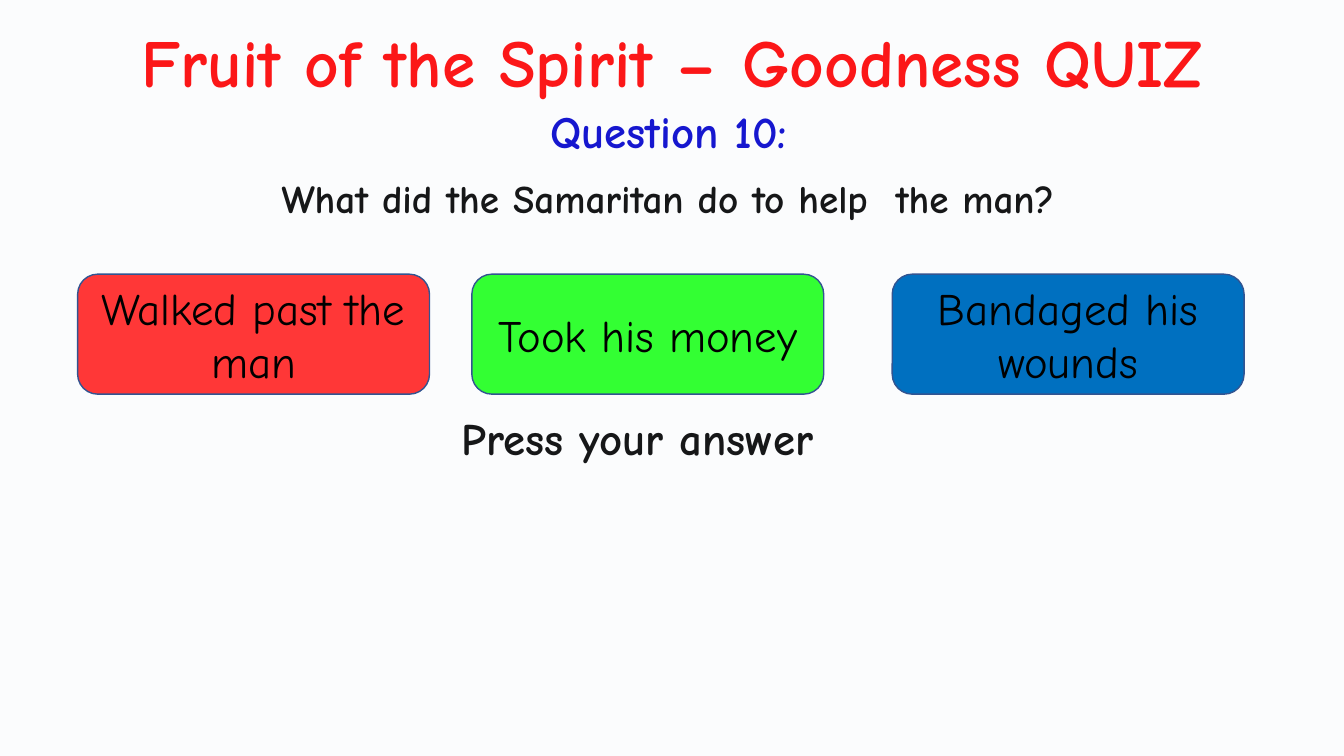
from dataclasses import dataclass

from lxml.etree import SubElement
from pptx import Presentation
from pptx.dml.color import RGBColor
from pptx.enum.shapes import MSO_SHAPE as Preset
from pptx.enum.text import MSO_ANCHOR as Anchor, MSO_AUTO_SIZE as AutoSize, PP_ALIGN as Align
from pptx.oxml.ns import qn
from pptx.shapes.autoshape import Shape
from pptx.slide import Slide
from pptx.util import Inches, Length, Pt

WIDTH, HEIGHT = Inches(13.33), Inches(7.5)
FONT = "Comic Neue"
EDGE = "325491"


@dataclass(frozen=True)
class Area:
    left: float
    top: float
    width: float
    height: float

    def lengths(self) -> tuple[Length, ...]:
        return (
            Length(round(WIDTH * self.left / 100)),
            Length(round(HEIGHT * self.top / 100)),
            Length(round(WIDTH * self.width / 100)),
            Length(round(HEIGHT * self.height / 100)),
        )


@dataclass(frozen=True)
class Caption:
    text: str
    area: Area
    size: int
    color: str = "000000"
    align: Align = Align.CENTER
    space_before: float = 0
    line_spacing: float | Length = 1.0


@dataclass(frozen=True)
class Answer:
    text: str
    left: float
    fill: str


TITLE = Caption("Fruit of the Spirit – Goodness QUIZ", Area(3.3, 2, 93.4, 12.13), 48, "FF0000")
CAPTIONS = [
    Caption("What did the Samaritan do to help  the man?", Area(6.45, 22, 86.5, 11.47), 28,
            space_before=10, line_spacing=Pt(36)),
    Caption("Press your answer", Area(33.61, 54.53, 50.49, 9.6), 32,
            align=Align.LEFT, space_before=7.5, line_spacing=0.9),
    Caption("Question 10:", Area(33.23, 13.07, 33.08, 8.53), 32, "0000CC"),
]
VEIL = Area(-3.23, -8.13, 106.45, 116.4)
ANSWERS = [
    Answer("Walked past the man", 5.78, "FF3737"),
    Answer("Took his money", 35.11, "33FF33"),
    Answer("Bandaged his wounds", 66.39, "0070C0"),
]
ANSWER_TOP, ANSWER_WIDTH, ANSWER_HEIGHT = 36.27, 26.18, 15.87


def rgb(color: str) -> RGBColor:
    return RGBColor.from_string(color)


def write(box: Shape, caption: Caption, bold: bool, anchor: Anchor, wrap: bool = True) -> None:
    frame = box.text_frame
    frame.text = caption.text
    frame.auto_size = AutoSize.NONE
    frame.word_wrap = wrap
    frame.vertical_anchor = anchor
    para = frame.paragraphs[0]
    para.alignment = caption.align
    para.space_before = Pt(caption.space_before)
    para.line_spacing = caption.line_spacing
    for span in para.runs:
        span.font.name = FONT
        span.font.size = Pt(caption.size)
        span.font.bold = bold
        span.font.color.rgb = rgb(caption.color)


def add_title(page: Slide, caption: Caption) -> None:
    box = page.shapes.title
    box.left, box.top, box.width, box.height = caption.area.lengths()
    write(box, caption, True, Anchor.TOP, wrap=False)


def add_caption(page: Slide, caption: Caption) -> None:
    box = page.shapes.add_textbox(*caption.area.lengths())
    write(box, caption, True, Anchor.TOP)


def add_panel(page: Slide, preset: Preset, area: Area, fill: str) -> Shape:
    panel = page.shapes.add_shape(preset, *area.lengths())
    panel.shadow.inherit = False
    panel.fill.solid()
    panel.fill.fore_color.rgb = rgb(fill)
    panel.line.color.rgb = rgb(EDGE)
    panel.line.width = Pt(1)
    return panel


def add_veil(page: Slide) -> None:
    veil = add_panel(page, Preset.RECTANGLE, VEIL, "DAE3F3")
    color = veil.element.spPr.find(qn("a:solidFill")).find(qn("a:srgbClr"))
    SubElement(color, qn("a:alpha")).set("val", "10000")


def add_answer(page: Slide, answer: Answer) -> None:
    area = Area(answer.left, ANSWER_TOP, ANSWER_WIDTH, ANSWER_HEIGHT)
    button = add_panel(page, Preset.ROUNDED_RECTANGLE, area, answer.fill)
    write(button, Caption(answer.text, area, 32), False, Anchor.MIDDLE)


def main() -> None:
    deck = Presentation()
    deck.slide_width, deck.slide_height = WIDTH, HEIGHT
    page = deck.slides.add_slide(deck.slide_layouts.get_by_name("Title Only"))
    page.background.fill.solid()
    page.background.fill.fore_color.rgb = rgb("FFFFFF")
    add_title(page, TITLE)
    for caption in CAPTIONS:
        add_caption(page, caption)
    add_veil(page)
    for answer in ANSWERS:
        add_answer(page, answer)
    deck.save("out.pptx")


if __name__ == "__main__":
    main()
